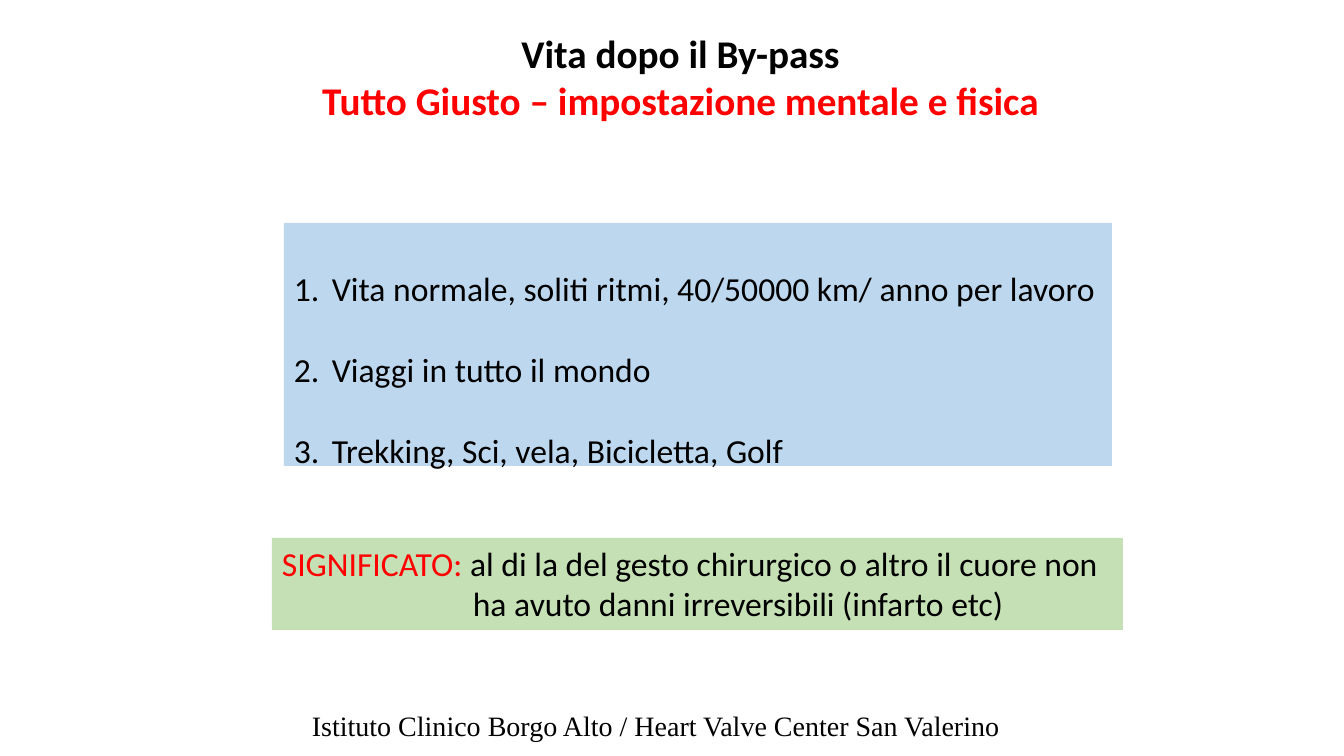
import pptx
import pptx.util
import pptx.dml.color
import pptx.enum.shapes
import pptx.enum.text
import pptx.oxml.ns
from lxml import etree

PX = 914400 / 100.8
HUES = {"black": "000000", "red": "FF0000", "blue": "BDD7EE", "green": "C5E0B4"}
ALIGN = pptx.enum.text.PP_ALIGN
BODY = {"name": "Calibri", "size": pptx.util.Pt(24)}
HEAD = {"name": "Calibri", "size": pptx.util.Pt(28), "bold": True}
FOOT = {"name": "Times New Roman", "size": pptx.util.Pt(20)}


def emu(px):
    return pptx.util.Emu(round(px * PX))


def color(hue):
    return pptx.dml.color.RGBColor.from_string(HUES[hue])


def apply(item, form):
    for key, value in form.items():
        setattr(item, key, value)


def place(shape, box):
    apply(shape, dict(zip(("left", "top", "width", "height"), map(emu, box))))


def write(shape, lines, font, para, wrap=True):
    """Each line is a list of (text, hue) runs."""
    frame = shape.text_frame
    apply(frame, {"word_wrap": wrap,
                  "auto_size": pptx.enum.text.MSO_AUTO_SIZE.NONE,
                  "vertical_anchor": pptx.enum.text.MSO_ANCHOR.TOP})
    for i, line in enumerate(lines):
        par = frame.add_paragraph() if i else frame.paragraphs[0]
        apply(par, para)
        for text, hue in line:
            run = par.add_run()
            run.text = text
            apply(run.font, font)
            run.font.color.rgb = color(hue)
    return frame.paragraphs


def panel(slide, box, hue):
    kind = pptx.enum.shapes.MSO_SHAPE.RECTANGLE
    shape = slide.shapes.add_shape(kind, *map(emu, box))
    shape.shadow.inherit = False
    shape.fill.solid()
    shape.fill.fore_color.rgb = color(hue)
    shape.line.fill.background()
    return shape


def indent(par, left, first=0):
    props = par._p.get_or_add_pPr()
    props.set("marL", str(emu(left)))
    props.set("indent", str(emu(first)))
    return props


def number(par):
    props = indent(par, 38, -38)
    tag = pptx.oxml.ns.qn("a:buAutoNum")
    etree.SubElement(props, tag, type="arabicPeriod")


def main():
    deck = pptx.Presentation()
    deck.slide_width, deck.slide_height = emu(1344), emu(756)
    slide = deck.slides.add_slide(deck.slide_layouts[5])

    # Title
    title = slide.shapes.title
    place(title, (307, 24, 747, 105))
    write(title, [[("Vita dopo il By-pass", "black")],
                  [("Tutto Giusto – impostazione mentale e fisica", "red")]],
          HEAD, {"alignment": ALIGN.CENTER})

    # Numbered list
    items = ["Vita normale, soliti ritmi, 40/50000 km/ anno per lavoro",
             "Viaggi in tutto il mondo",
             "Trekking, Sci, vela, Bicicletta, Golf"]
    habits = panel(slide, (284, 223, 828, 243), "blue")
    for par in write(habits, [[(text, "black")] for text in items], BODY,
                     {"alignment": ALIGN.LEFT, "line_spacing": 2.0}):
        number(par)

    # Meaning
    sense = panel(slide, (272, 538, 851, 92), "green")
    pars = write(sense, [
        [("SIGNIFICATO: ", "red"),
         ("al di la del gesto chirurgico o altro il cuore non", "black")],
        [("ha avuto danni irreversibili (infarto etc)", "black")]],
        BODY, {"alignment": ALIGN.LEFT})
    indent(pars[1], 191)

    # Footer
    foot = slide.shapes.add_textbox(*map(emu, (302, 704, 709, 44)))
    write(foot, [[("Istituto Clinico Borgo Alto / Heart Valve Center San Valerino",
                   "black")]], FOOT, {"alignment": ALIGN.LEFT}, wrap=False)

    deck.save("out.pptx")


if __name__ == "__main__":
    main()
